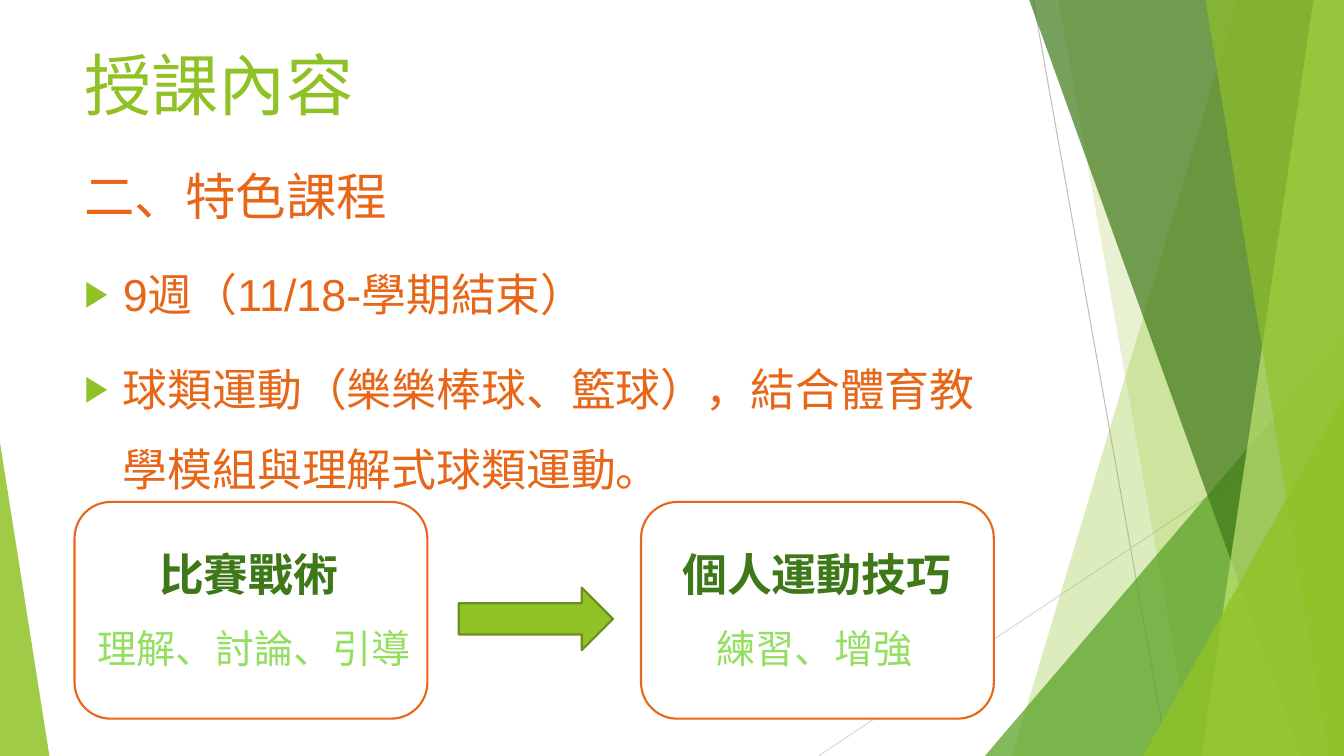
from dataclasses import dataclass

from pptx import Presentation
from pptx import util as u
from pptx.dml.color import RGBColor
from pptx.enum import shapes, text
from pptx.oxml import parse_xml
from pptx.oxml.ns import nsdecls, qn

WIDTH, HEIGHT = u.Inches(13.33), u.Inches(7.5)


@dataclass(frozen=True)
class Theme:
    lime: str = "90C226"
    lime_edge: str = "6B901C"
    pale_lime: str = "C0E474"
    green: str = "54A021"
    forest: str = "3F7819"
    mint: str = "94DE61"
    orange: str = "E76618"
    white: str = "FFFFFF"
    rule: str = "BFBFBF"
    light_rule: str = "D9D9D9"
    heading_font: str = "Cabin"
    body_font: str = "Arial"
    title_size: int = 48
    section_size: int = 36
    point_size: int = 32
    detail_size: int = 28


THEME = Theme()


# Lengths are percentages of the slide's width and height
def across(share):
    return round(WIDTH * share / 100)


def down(share):
    return round(HEIGHT * share / 100)


def frame(left, top, width, height):
    return across(left), down(top), across(width), down(height)


def paint(shape, fill, opacity=100, edge=None):
    shape.shadow.inherit = False
    shape.fill.solid()
    shape.fill.fore_color.rgb = RGBColor.from_string(fill)
    if opacity < 100:
        color = shape.fill._xPr.find(qn("a:solidFill"))[0]
        color.append(parse_xml(f'<a:alpha {nsdecls("a")} val="{opacity * 1000}"/>'))
    if edge:
        shape.line.color.rgb = RGBColor.from_string(edge)
        shape.line.width = u.Pt(1.5)
    else:
        shape.line.fill.background()


def add_rule(slide, start, end, color):
    rule = slide.shapes.add_connector(
        shapes.MSO_CONNECTOR.STRAIGHT,
        across(start[0]), down(start[1]), across(end[0]), down(end[1]))
    rule.line.color.rgb = RGBColor.from_string(color)
    rule.line.width = u.Pt(0.75)
    rule._element.spPr.append(parse_xml(f'<a:effectLst {nsdecls("a")}/>'))


def add_facet(slide, top_left, bottom_left, color, opacity):
    """A full-height pane from a slanted left edge to the slide's right edge."""
    builder = slide.shapes.build_freeform(across(top_left), 0)
    builder.add_line_segments(
        [(WIDTH, 0), (WIDTH, HEIGHT), (across(bottom_left), HEIGHT)], close=True)
    paint(builder.convert_to_shape(), color, opacity)


def add_corner(slide, left, top, width, apex, color, opacity):
    """A triangle standing on the slide's bottom edge."""
    corner = slide.shapes.add_shape(
        shapes.MSO_SHAPE.ISOSCELES_TRIANGLE, *frame(left, top, width, 100 - top))
    corner.adjustments[0] = apex
    paint(corner, color, opacity)


def add_block(slide, preset, place, fill, edge):
    paint(slide.shapes.add_shape(preset, *frame(*place)), fill, edge=edge)


def add_text_frame(slide, place, **settings):
    text_frame = slide.shapes.add_textbox(*frame(*place)).text_frame
    for name, value in {"word_wrap": True, **settings}.items():
        setattr(text_frame, name, value)
    return text_frame


def write(paragraph, wording, color, **formats):
    run = paragraph.add_run()
    run.text = wording
    run.font.color.rgb = RGBColor.from_string(color)
    for name, value in formats.items():
        setattr(run.font, name, value)


def add_bullet(paragraph):
    properties = paragraph._p.get_or_add_pPr()
    properties.set("marL", str(u.Inches(0.38)))
    properties.set("indent", str(-u.Inches(0.38)))
    for tag in (f'<a:buClr {nsdecls("a")}><a:srgbClr val="{THEME.lime}"/></a:buClr>',
                f'<a:buSzPct {nsdecls("a")} val="80000"/>',
                f'<a:buFont {nsdecls("a")} typeface="{THEME.body_font}"/>',
                f'<a:buChar {nsdecls("a")} char="▶"/>'):
        properties.append(parse_xml(tag))


def add_backdrop(slide):
    add_rule(slide, (76.88, 0), (86.87, 100), THEME.rule)
    add_rule(slide, (100, 53.73), (60.9, 100), THEME.light_rule)
    add_facet(slide, 92.1, 75.3, THEME.lime, 30)
    add_facet(slide, 78.75, 88.73, THEME.lime, 20)
    add_corner(slide, 73.28, 44.4, 26.72, 1, THEME.green, 72)
    add_facet(slide, 76.58, 96.82, THEME.forest, 70)
    add_facet(slide, 97.73, 89.4, THEME.pale_lime, 70)
    add_facet(slide, 89.7, 98.85, THEME.lime, 65)
    add_corner(slide, 85.05, 52.4, 14.95, 1, THEME.lime, 80)
    add_corner(slide, 0, 58.53, 3.68, 0, THEME.lime, 85)


def add_title(slide, wording):
    title = add_text_frame(slide, (5.55, 4.93, 70.5, 12.27),
                           vertical_anchor=text.MSO_ANCHOR.MIDDLE)
    write(title.paragraphs[0], wording, THEME.lime,
          name=THEME.heading_font, size=u.Pt(THEME.title_size))


def add_course(slide, section, points):
    course = add_text_frame(slide, (5.55, 17.2, 70.5, 48.67))
    for index, wording in enumerate([section, *points]):
        line = course.add_paragraph() if index else course.paragraphs[0]
        line.line_spacing = 1.5
        line.space_before = u.Pt(10)
        if index:
            add_bullet(line)
        size = THEME.point_size if index else THEME.section_size
        write(line, wording, THEME.orange, name=THEME.body_font, size=u.Pt(size))


def add_caption(slide, place, wording, color, size, bold=False):
    caption = add_text_frame(slide, place, auto_size=text.MSO_AUTO_SIZE.SHAPE_TO_FIT_TEXT)
    write(caption.paragraphs[0], wording, color,
          name=THEME.heading_font, size=u.Pt(size), bold=bold)


def add_card(slide, left, skill, detail):
    """Each of skill and detail is (wording, left, width)."""
    add_block(slide, shapes.MSO_SHAPE.ROUNDED_RECTANGLE,
              (left, 66.4, 26.25, 28.67), THEME.white, THEME.orange)
    wording, start, width = skill
    add_caption(slide, (start, 71.6, width, 8.53), wording,
                THEME.forest, THEME.point_size, bold=True)
    wording, start, width = detail
    add_caption(slide, (start, 81.87, width, 7.6), wording,
                THEME.mint, THEME.detail_size)


def main():
    deck = Presentation()
    deck.slide_width, deck.slide_height = WIDTH, HEIGHT
    slide = deck.slides.add_slide(deck.slide_layouts[6])

    # Backdrop and text
    add_backdrop(slide)
    add_title(slide, "授課內容")
    add_course(slide, "二、特色課程", [
        "9週（11/18-學期結束）",
        "球類運動（樂樂棒球、籃球），結合體育教學模組與理解式球類運動。",
    ])

    # From tactics to personal skills
    add_card(slide, 5.55, ("比賽戰術", 11.1, 15.15), ("理解、討論、引導", 6.53, 25.28))
    add_card(slide, 47.7, ("個人運動技巧", 50.03, 21.9), ("練習、增強", 52.58, 16.5))
    add_block(slide, shapes.MSO_SHAPE.RIGHT_ARROW,
              (34.13, 77.73, 11.48, 8.27), THEME.lime, THEME.lime_edge)

    deck.save("out.pptx")


if __name__ == "__main__":
    main()
